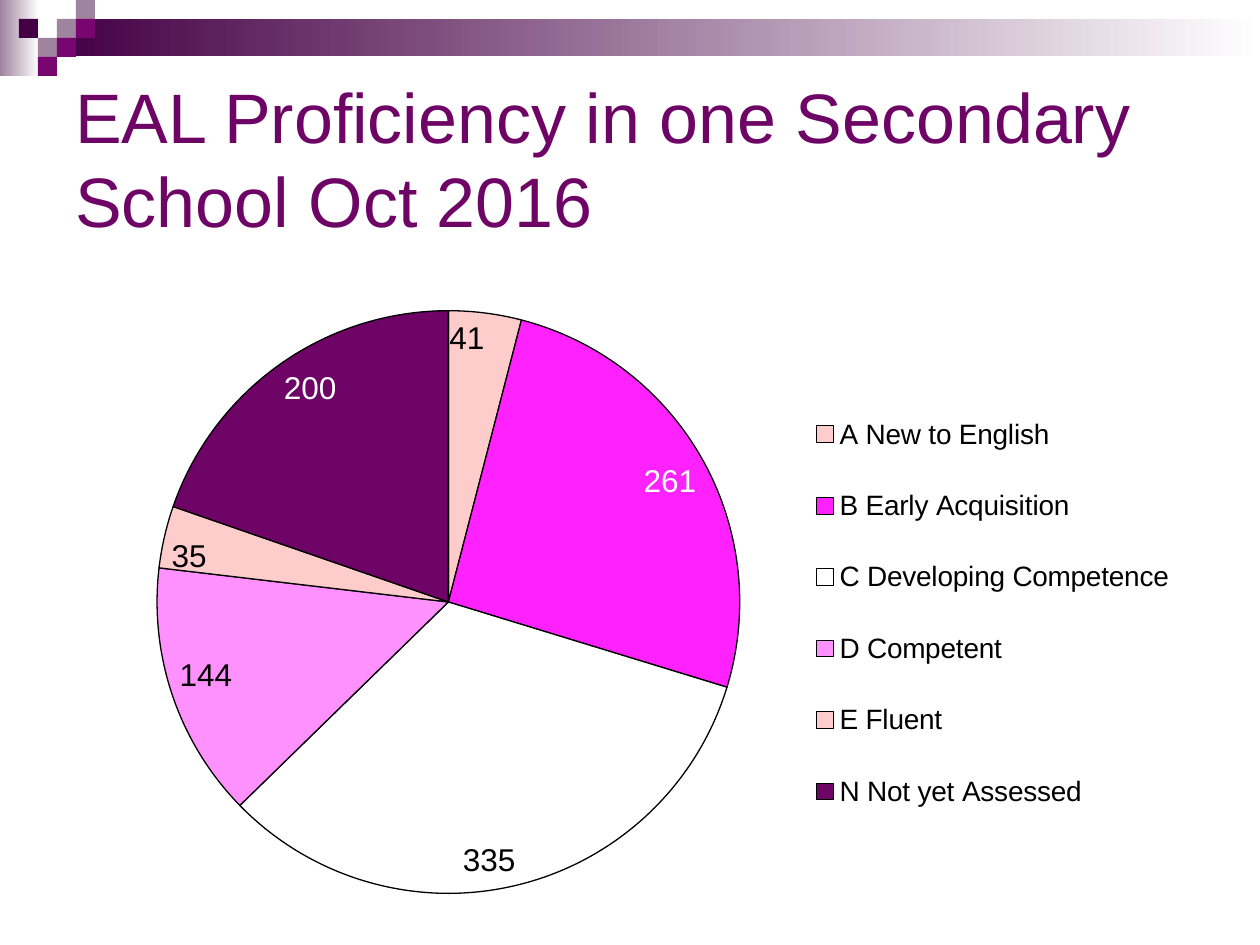
from pptx import Presentation
from pptx.chart.data import CategoryChartData
from pptx.dml.color import RGBColor
from pptx.enum.chart import XL_CHART_TYPE, XL_LABEL_POSITION, XL_LEGEND_POSITION
from pptx.enum.shapes import MSO_SHAPE
from pptx.enum.text import MSO_ANCHOR
from pptx.oxml import parse_xml
from pptx.oxml.ns import nsdecls
from pptx.util import Pt

PX = 914400 / 126
FONT = "Arial"
BLACK = RGBColor(0x00, 0x00, 0x00)
WHITE = RGBColor(0xFF, 0xFF, 0xFF)
PLUM = RGBColor(0x6D, 0x04, 0x66)
DARK = RGBColor(0x44, 0x00, 0x44)
MID = RGBColor(0x79, 0x05, 0x71)
MAUVE = RGBColor(0x9F, 0x83, 0x9F)
ROSE = RGBColor(0xFF, 0xCC, 0xCC)
PINK = RGBColor(0xFF, 0x22, 0xFF)
LILAC = RGBColor(0xFF, 0x91, 0xFF)

TILE = 19
TILES = [  # column, row, colour
    (2, 1, MAUVE), (3, 0, MAUVE), (3, 1, MID), (1, 2, MAUVE),
    (0, 1, DARK), (2, 2, MID), (1, 3, MID),
]
SLICES = [  # name, pupils, fill, label colour
    ("A New to English", 41, ROSE, BLACK),
    ("B Early Acquisition", 261, PINK, WHITE),
    ("C Developing Competence", 335, WHITE, BLACK),
    ("D Competent", 144, LILAC, BLACK),
    ("E Fluent", 35, ROSE, BLACK),
    ("N Not yet Assessed", 200, PLUM, WHITE),
]


def emu(*sizes):
    return [round(size * PX) for size in sizes]


def add_rect(slide, box, color, fade=False):
    """Add a plain rectangle, fading to white on the right if asked."""
    rect = slide.shapes.add_shape(MSO_SHAPE.RECTANGLE, *emu(*box))
    rect.shadow.inherit = False
    rect.line.fill.background()
    if fade:
        rect.fill.gradient()
        rect.fill.gradient_angle = 0
        for stop, tint in zip(rect.fill.gradient_stops, (color, WHITE)):
            stop.color.rgb = tint
    else:
        rect.fill.solid()
        rect.fill.fore_color.rgb = color


def add_band(slide, box):
    left, top, width, height = box
    add_rect(slide, (left, top, 2 * TILE + 1, height), MAUVE, fade=True)
    start = 3 * TILE
    add_rect(slide, (left + start, top + TILE, width - start, 2 * TILE - 1),
             DARK, fade=True)
    for col, row, color in TILES:
        spot = (left + (col + 1) * TILE, top + row * TILE)
        add_rect(slide, (*spot, TILE, TILE), color)


def add_title(slide, box):
    frame = slide.shapes.add_textbox(*emu(*box)).text_frame
    frame.word_wrap = True
    frame.vertical_anchor = MSO_ANCHOR.MIDDLE
    run = frame.paragraphs[0].add_run()
    run.text = "EAL Proficiency in one Secondary School Oct 2016"
    set_font(run.font, 40, PLUM)


def set_font(font, size, color):
    font.name = FONT
    font.size = Pt(size)
    font.color.rgb = color


def make_layout(box, area, inner=False):
    """Return a manual layout for a part of the chart, as shares of its area."""
    left, top, width, height = box
    x, y, w, h = area
    target = '<c:layoutTarget val="inner"/>' if inner else ""
    shares = {"x": x / width, "y": y / height, "w": w / width, "h": h / height}
    values = "".join(f'<c:{key} val="{share:.3f}"/>'
                     for key, share in shares.items())
    return parse_xml(
        f'<c:layout {nsdecls("c")}><c:manualLayout>{target}'
        f'<c:xMode val="edge"/><c:yMode val="edge"/>{values}'
        '</c:manualLayout></c:layout>')


def add_pie(slide, box):
    data = CategoryChartData()
    data.categories = [name for name, *_ in SLICES]
    data.add_series("Series 1", [count for _, count, *_ in SLICES])
    chart = slide.shapes.add_chart(XL_CHART_TYPE.PIE, *emu(*box), data).chart
    set_font(chart.font, 10, BLACK)
    chart.has_title = False

    plot = chart.plots[0]
    plot.vary_by_categories = True
    plot.has_data_labels = True
    labels = plot.data_labels
    labels.show_value = True
    labels.show_percentage = False
    labels.number_format = "#,##0"
    labels.number_format_is_linked = False
    labels.position = XL_LABEL_POSITION.INSIDE_END
    set_font(labels.font, 18, WHITE)
    for index, (_, _, fill, ink) in enumerate(SLICES):
        point = plot.series[0].points[index]
        point.format.fill.solid()
        point.format.fill.fore_color.rgb = fill
        point.format.line.color.rgb = BLACK
        point.format.line.width = Pt(0.75)
        set_font(point.data_label.font, 18, ink)
        point.data_label.position = XL_LABEL_POSITION.INSIDE_END

    chart.has_legend = True
    legend = chart.legend
    legend.position = XL_LEGEND_POSITION.RIGHT
    legend.include_in_layout = False
    set_font(legend.font, 16, BLACK)
    place = legend._element.find("{*}legendPos")
    place.addnext(make_layout(box, (770, 126, 375, 470)))
    area = chart._chartSpace.chart.plotArea
    for old in area.findall("{*}layout"):
        area.remove(old)
    area.insert(0, make_layout(box, (122, 59, 583, 583), inner=True))


def main():
    deck = Presentation()
    deck.slide_width, deck.slide_height = emu(1260, 945)
    slide = deck.slides.add_slide(deck.slide_layouts[6])
    add_band(slide, (0, 0, 1260, 76))
    add_pie(slide, (35, 252, 1150, 660))
    add_title(slide, (63, 63, 1134, 189))
    deck.save("out.pptx")


if __name__ == "__main__":
    main()
